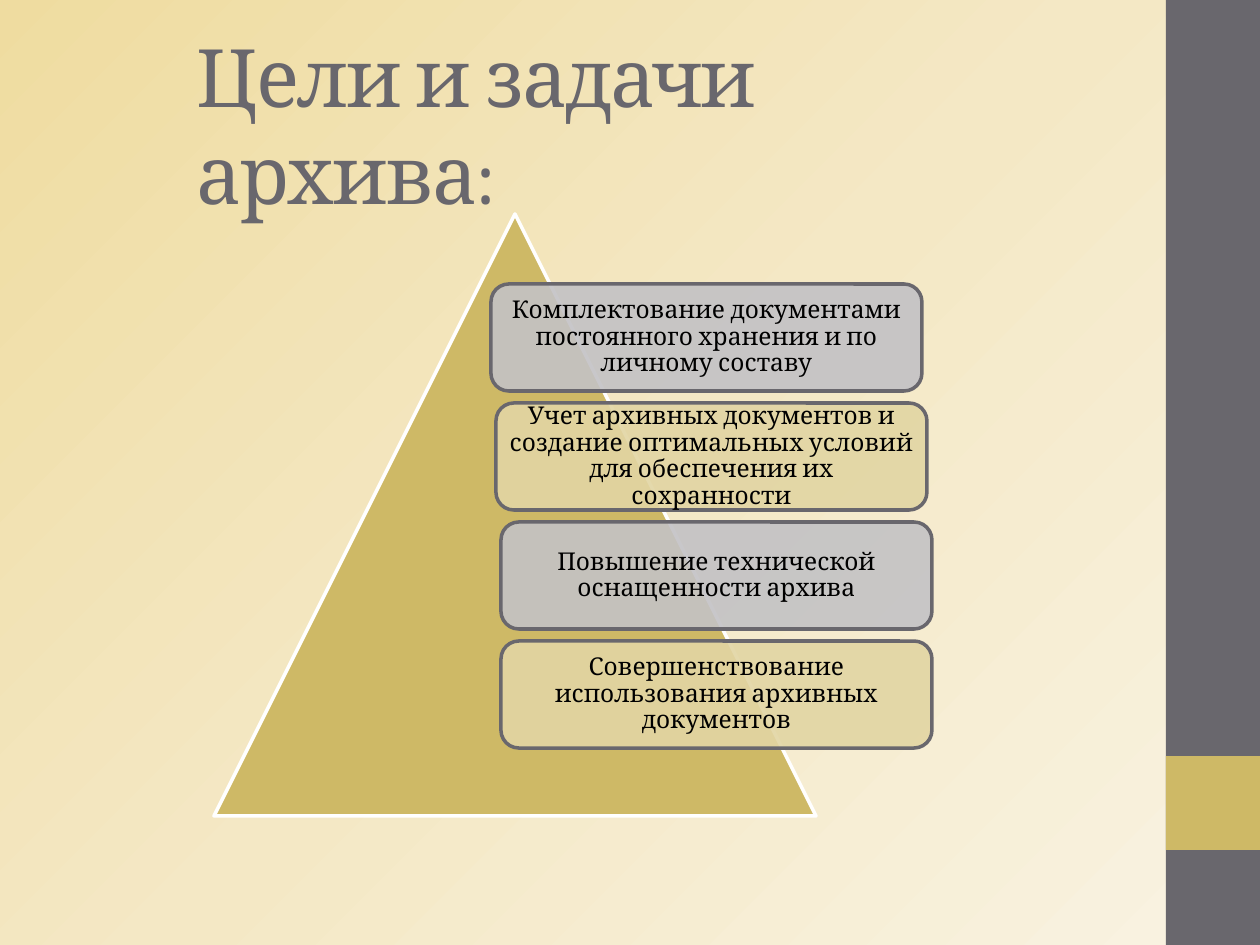
from copy import deepcopy

from lxml import etree
from pptx import Presentation
from pptx import util as u
from pptx.dml.color import RGBColor
from pptx.enum import shapes, text
from pptx.oxml.ns import qn

PX = u.Inches(1) / 126
THEME = {
    "background": ["EFDCA0", "F4E8C5", "F9F3E2"],
    "gray": "69676D", "gold": "CEB966", "white": "FFFFFF", "black": "000000",
    "goals": ["C3C2C5", "E2D5A3"],
    "font": "Cambria", "title_size": 46, "goal_size": 14, "line": 2,
}


def add_block(kind, box, fill, line=None):
    block = slide.shapes.add_shape(kind, *(round(n * PX) for n in box))
    block.shadow.inherit = False
    block.fill.solid()
    block.fill.fore_color.rgb = RGBColor.from_string(fill)
    if line:
        block.line.color.rgb = RGBColor.from_string(line)
        block.line.width = u.Pt(THEME["line"])
    else:
        block.line.fill.background()
    return block


def write(frame, words, size, color, align, **frame_format):
    frame_format |= {"word_wrap": True, "auto_size": text.MSO_AUTO_SIZE.NONE,
                     "vertical_anchor": text.MSO_ANCHOR.MIDDLE}
    for name, value in frame_format.items():
        setattr(frame, name, value)
    paragraph = frame.paragraphs[0]
    paragraph.alignment = align
    run = paragraph.add_run()
    run.text = words
    for name, value in {"name": THEME["font"], "size": u.Pt(size)}.items():
        setattr(run.font, name, value)
    run.font.color.rgb = RGBColor.from_string(color)
    return paragraph


prs = Presentation()
prs.slide_width, prs.slide_height = u.Inches(10), u.Inches(7.5)
slide = prs.slides.add_slide(prs.slide_layouts[5])

# Background: three stops, running from top left to bottom right
backdrop = slide.background.fill
backdrop.gradient()
backdrop.gradient_angle = 315
stop_list = slide.element.find(".//" + qn("a:gsLst"))
stop_list.insert(1, deepcopy(stop_list[0]))
for i, stop in enumerate(backdrop.gradient_stops):
    stop.position = i / 2
    stop.color.rgb = RGBColor.from_string(THEME["background"][i])

# Sidebar with its gold band
RECT = shapes.MSO_SHAPE.RECTANGLE
add_block(RECT, (1166, 0, 94, 945), THEME["gray"])
add_block(RECT, (1166, 756, 94, 94), THEME["gold"])

# Title
title = slide.shapes.title
for name, value in {"left": 184, "top": 45, "width": 815, "height": 158}.items():
    setattr(title, name, round(value * PX))
heading = write(title.text_frame, "Цели и задачи архива:", THEME["title_size"],
                THEME["gray"], text.PP_ALIGN.LEFT)
heading.runs[0].font._element.set("spc", "-100")

# Pyramid
add_block(shapes.MSO_SHAPE.ISOSCELES_TRIANGLE, (214, 214, 602, 602),
          THEME["gold"], THEME["white"])

# Goals: equal steps down, each box slightly transparent
goals = [
    (491, "Комплектование документами постоянного хранения и по личному составу"),
    (496, "Учет архивных документов и создание оптимальных условий для обеспечения их сохранности"),
    (501, "Повышение технической оснащенности архива"),
    (501, "Совершенствование использования архивных документов"),
]
margins = {f"margin_{side}": round(8 * PX) for side in ("left", "right", "top", "bottom")}
for i, (left, words) in enumerate(goals):
    goal = add_block(shapes.MSO_SHAPE.ROUNDED_RECTANGLE, (left, 284 + 119 * i, 431, 107),
                     THEME["goals"][i % 2], THEME["gray"])
    fill_color = goal.element.spPr.find(qn("a:solidFill"))[0]
    etree.SubElement(fill_color, qn("a:alpha"), val="90000")
    paragraph = write(goal.text_frame, words, THEME["goal_size"], THEME["black"],
                      text.PP_ALIGN.CENTER, **margins)
    paragraph.line_spacing = 0.9

prs.save("out.pptx")
